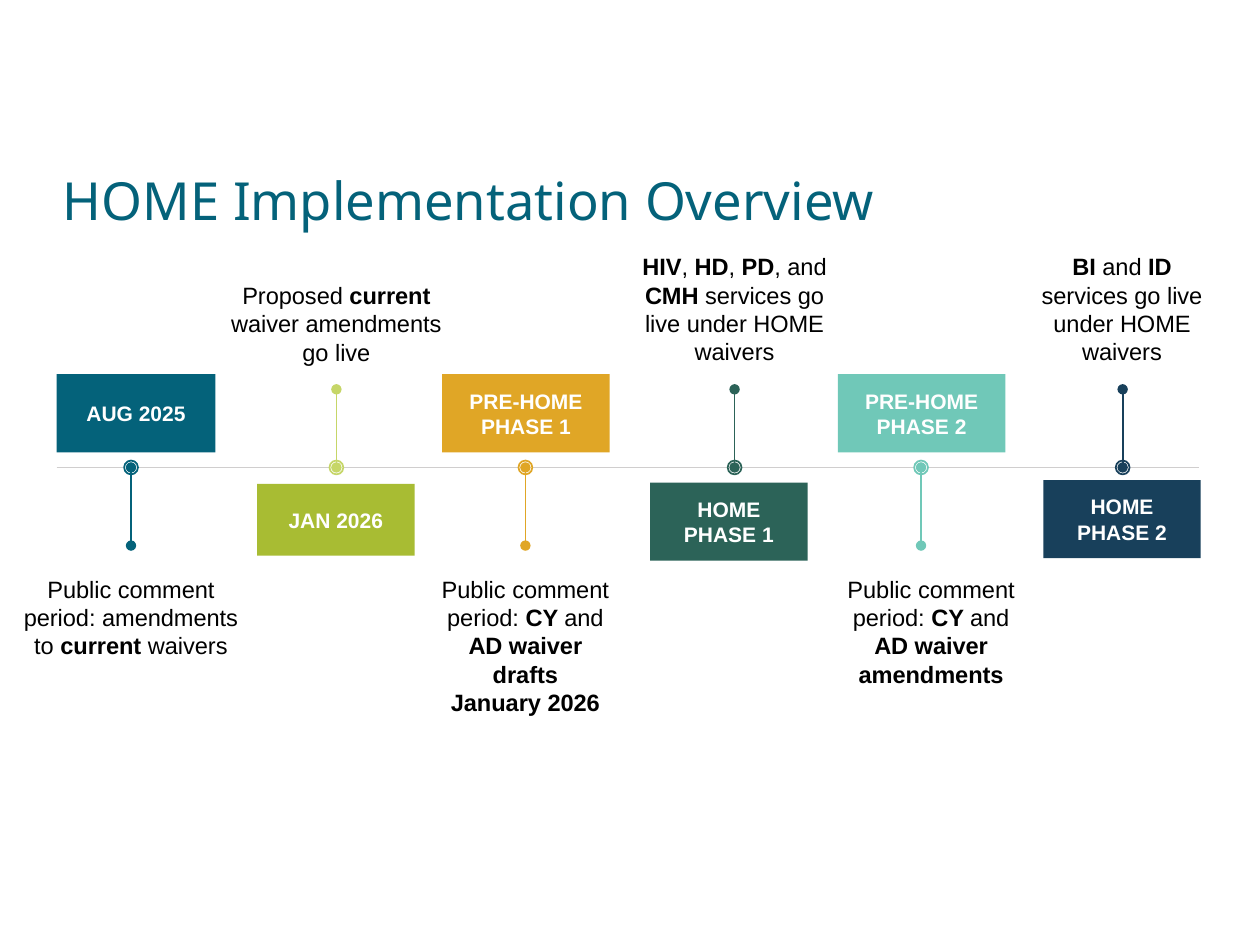
from pptx import Presentation
from pptx.dml.color import RGBColor
from pptx.enum.shapes import MSO_CONNECTOR, MSO_SHAPE
from pptx.enum.text import MSO_ANCHOR, PP_ALIGN
from pptx.oxml.ns import qn
from pptx.util import Inches, Pt
from lxml.etree import SubElement

TITLE = "HOME Implementation Overview"
AXIS = 3.71
STEM = 0.62
RING = 0.11
BOX_TOP = 2.97
NOTE_TOP, NOTE_BASE = 4.53, 2.94

# stem x, label, colour, stem colour, stem width,
# label box (left, top, width, height), note (left, width, lines), note text
# Text between asterisks is bold. A label above the axis has its note below.
STEPS = [
    (1.04, "AUG 2025", "04627A", "04627A", 1, (0.45, BOX_TOP, 1.26, 0.62),
     (0.06, 1.96, 3), ["Public comment period: amendments to *current* waivers"]),
    (2.67, "JAN 2026", "A8BC33", "C6D668", 1, (2.04, 3.84, 1.25, 0.57),
     (1.69, 1.96, 3), ["Proposed *current *waiver amendments go live"]),
    (4.17, "PRE-HOME PHASE 1", "E0A626", "E0A626", 1, (3.51, BOX_TOP, 1.33, 0.62),
     (3.4, 1.54, 5), ["Public comment period: *CY *and* AD waiver drafts*",
                      "*January 2026*"]),
    (5.83, "HOME PHASE 1", "2C6358", "2C6358", 0.5, (5.16, 3.83, 1.25, 0.62),
     (4.98, 1.7, 4), ["*HIV*, *HD*, *PD*, and *CMH* services go live under HOME waivers"]),
    (7.31, "PRE-HOME PHASE 2", "70C8B8", "70C8B8", 1, (6.65, BOX_TOP, 1.33, 0.62),
     (6.59, 1.6, 5), ["Public comment period: *CY *and* AD waiver amendments*"]),
    (8.91, "HOME PHASE 2", "18405B", "18405B", 1, (8.28, 3.81, 1.25, 0.62),
     (8.19, 1.43, 4), ["*BI* and *ID* services go live under HOME waivers"]),
]

deck = Presentation()
deck.slide_width, deck.slide_height = Inches(10), Inches(7.5)
slide = deck.slides.add_slide(deck.slide_layouts[6])
shapes = slide.shapes


def rgb(color):
    return RGBColor.from_string(color)


def style(run, size, color, bold=False, name="Arial"):
    font = run.font
    font.name, font.size, font.bold = name, Pt(size), bold
    font.color.rgb = rgb(color)


def add_line(x1, y1, x2, y2, color, width, dots=False):
    line = shapes.add_connector(MSO_CONNECTOR.STRAIGHT, *map(Inches, (x1, y1, x2, y2)))
    line.line.color.rgb = rgb(color)
    line.line.width = Pt(width)
    props = line._element.spPr
    if dots:
        for end in ("a:headEnd", "a:tailEnd"):
            SubElement(props.find(qn("a:ln")), qn(end), type="oval")
    SubElement(props, qn("a:effectLst"))


def add_shape(kind, place, fill):
    shape = shapes.add_shape(kind, *map(Inches, place))
    shape.shadow.inherit = False
    shape.fill.solid()
    shape.fill.fore_color.rgb = rgb(fill)
    shape.line.fill.background()
    return shape


def add_label(place, text, fill):
    box = add_shape(MSO_SHAPE.RECTANGLE, place, fill)
    frame = box.text_frame
    frame.text = text
    frame.word_wrap = True
    frame.vertical_anchor = MSO_ANCHOR.MIDDLE
    par = frame.paragraphs[0]
    par.alignment = PP_ALIGN.CENTER
    style(par.runs[0], 12, "FFFFFF", True)


def add_ring(x, color):
    ring = add_shape(MSO_SHAPE.OVAL, (x - RING / 2, AXIS - RING / 2, RING, RING), "FFFFFF")
    ring.line.color.rgb = rgb(color)
    ring.line.width = Pt(1)


def add_note(left, top, width, height, texts):
    frame = shapes.add_textbox(*map(Inches, (left, top, width, height))).text_frame
    frame.word_wrap = True
    frame.margin_left = frame.margin_right = Inches(0.06)
    frame.margin_top = frame.margin_bottom = Inches(0.03)
    for i, text in enumerate(texts):
        par = frame.add_paragraph() if i else frame.paragraphs[0]
        par.alignment = PP_ALIGN.CENTER
        for j, part in enumerate(text.split("*")):
            if part:
                run = par.add_run()
                run.text = part
                style(run, 13.5, "000000", j % 2 == 1)


head = shapes.add_textbox(*map(Inches, (0.4, 1.21, 7.66, 0.81))).text_frame
head.text = TITLE
head.word_wrap = True
head.vertical_anchor = MSO_ANCHOR.MIDDLE
head.paragraphs[0].line_spacing = 0.9
style(head.paragraphs[0].runs[0], 30, "04627A", name="Noto Sans")

add_line(0.45, AXIS, 9.52, AXIS, "D0CECE", 1)
for x, label, fill, color, weight, place, (left, width, lines), texts in STEPS:
    below = place[1] < AXIS
    add_ring(x, color)
    start = AXIS if below else AXIS - STEM
    add_line(x, start, x, start + STEM, color, weight, dots=True)
    add_label(place, label, fill)
    height = 0.06 + 0.227 * lines
    add_note(left, NOTE_TOP if below else NOTE_BASE - height, width, height, texts)

deck.save("out.pptx")
